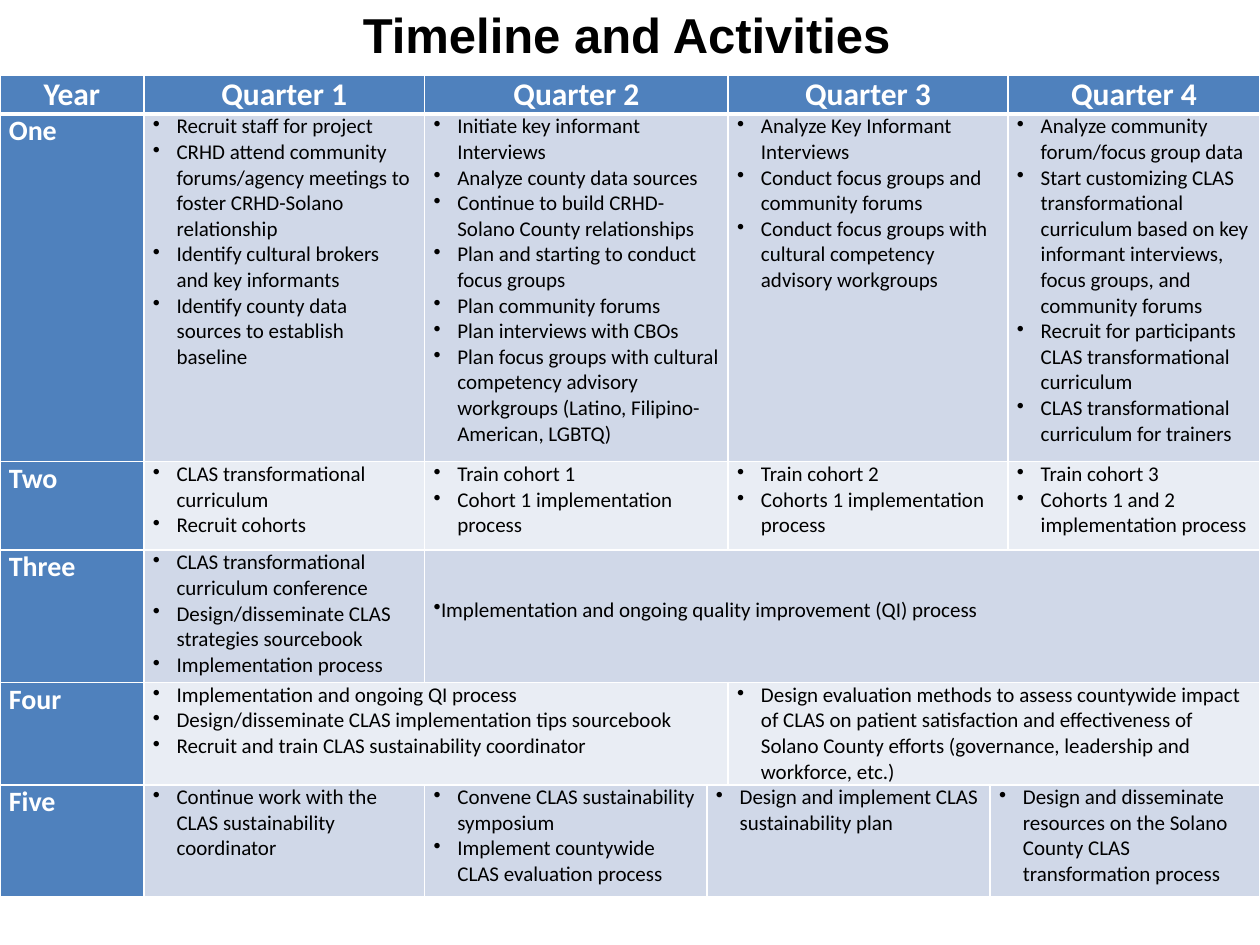
import pptx
import pptx.dml.color
import pptx.enum.text
import pptx.oxml
import pptx.oxml.ns
import pptx.util
from pptx.util import Cm

CENTER = pptx.enum.text.PP_ALIGN.CENTER
MIDDLE = pptx.enum.text.MSO_ANCHOR.MIDDLE
BLUE, BAND, PALE = "4F81BD", "D0D8E8", "E9EDF4"
WHITE, BLACK = "FFFFFF", "000000"
TITLE = {"name": "Arial", "size": 28, "bold": True, "color": BLACK}
HEADING = {"name": "Calibri", "size": 18, "bold": True, "color": WHITE}
YEAR = {**HEADING, "size": 16}
ACTIVITY = {"name": "Calibri", "size": 12, "bold": False, "color": BLACK}

COLUMN_WIDTHS = [2.9, 5.66, 5.69, 0.43, 5.28, 0.36, 5.08]
ROW_HEIGHTS = [0.77, 7.01, 1.78, 2.67, 2.03, 2.26]
QUARTERS = [1, 2, 4, 6]  # first column of each quarter

# Per year: name, first column of each block, activities of each block
YEARS = [
    ("One", QUARTERS, [
        ["Recruit staff for project",
         "CRHD attend community forums/agency meetings to foster CRHD-Solano relationship",
         "Identify cultural brokers and key informants",
         "Identify county data sources to establish baseline"],
        ["Initiate key informant Interviews",
         "Analyze county data sources",
         "Continue to build CRHD-Solano County relationships",
         "Plan and starting to conduct focus groups",
         "Plan community forums",
         "Plan interviews with CBOs",
         "Plan focus groups with cultural competency advisory workgroups "
         "(Latino, Filipino-American, LGBTQ)"],
        ["Analyze Key Informant Interviews",
         "Conduct focus groups and community forums",
         "Conduct focus groups with cultural competency advisory workgroups"],
        ["Analyze community forum/focus group data",
         "Start customizing CLAS transformational curriculum based on key "
         "informant interviews, focus groups, and community forums",
         "Recruit for participants CLAS transformational curriculum",
         "CLAS transformational curriculum for trainers"]]),
    ("Two", QUARTERS, [
        ["CLAS transformational curriculum", "Recruit cohorts"],
        ["Train cohort 1", "Cohort 1 implementation process"],
        ["Train cohort 2", "Cohorts 1 implementation process"],
        ["Train cohort 3", "Cohorts 1 and 2 implementation process"]]),
    ("Three", [1, 2], [
        ["CLAS transformational curriculum conference",
         "Design/disseminate CLAS strategies sourcebook",
         "Implementation process"],
        ["Implementation and ongoing quality improvement (QI) process"]]),
    ("Four", [1, 4], [
        ["Implementation and ongoing QI process",
         "Design/disseminate CLAS implementation tips sourcebook",
         "Recruit and train CLAS sustainability coordinator"],
        ["Design evaluation methods to assess countywide impact of CLAS on "
         "patient satisfaction and effectiveness of Solano County efforts "
         "(governance, leadership and workforce, etc.)"]]),
    ("Five", [1, 2, 3, 5], [
        ["Continue work with the CLAS sustainability coordinator"],
        ["Convene CLAS sustainability symposium",
         "Implement countywide CLAS evaluation process"],
        ["Design and implement CLAS sustainability plan"],
        ["Design and disseminate resources on the Solano County CLAS "
         "transformation process"]]),
]


def rgb(value):
    return pptx.dml.color.RGBColor.from_string(value)


class TimelineSlide:
    def __init__(self, presentation):
        self.slide = presentation.slides.add_slide(presentation.slide_layouts[6])

    def add_lines(self, frame, lines, style, align=None, indent=None):
        """Fill a text frame; an indent in cm makes the lines bulleted."""
        for number, line in enumerate(lines):
            paragraph = frame.add_paragraph() if number else frame.paragraphs[0]
            paragraph.alignment = align
            run = paragraph.add_run()
            run.text = line
            run.font.color.rgb = rgb(style["color"])
            run.font.size = pptx.util.Pt(style["size"])
            for key in ("name", "bold"):
                setattr(run.font, key, style[key])
            if indent is not None:
                properties = paragraph._p.get_or_add_pPr()
                properties.set("marL", str(Cm(indent)))
                properties.set("indent", str(-Cm(indent)))
                bullet = pptx.oxml.parse_xml(
                    f'<a:buChar {pptx.oxml.ns.nsdecls("a")} char="•"/>')
                properties.append(bullet)

    def title(self, text, left, top, width, height):
        box = self.slide.shapes.add_textbox(Cm(left), Cm(top), Cm(width), Cm(height))
        box.text_frame.word_wrap = True
        box.text_frame.vertical_anchor = MIDDLE
        self.add_lines(box.text_frame, [text], TITLE, CENTER)

    def table(self, top, widths, heights):
        table = self.slide.shapes.add_table(
            len(heights), len(widths), 0, Cm(top), Cm(sum(widths)), Cm(sum(heights))).table
        table.horz_banding = False
        for column, width in zip(table.columns, widths):
            column.width = Cm(width)
        for row, height in zip(table.rows, heights):
            row.height = Cm(height)
        return table

    def format_cell(self, cell, fill, above=1, below=1):
        margins = {"margin_left": 0.18, "margin_right": 0.18,
                   "margin_top": 0, "margin_bottom": 0}
        for key, value in margins.items():
            setattr(cell, key, Cm(value))
        properties = cell._tc.get_or_add_tcPr()
        for side, points in {"L": 1, "R": 1, "T": above, "B": below}.items():
            properties.append(pptx.oxml.parse_xml(
                f'<a:ln{side} {pptx.oxml.ns.nsdecls("a")} w="{pptx.util.Pt(points)}">'
                f'<a:solidFill><a:srgbClr val="{WHITE}"/></a:solidFill></a:ln{side}>'))
        cell.fill.solid()
        cell.fill.fore_color.rgb = rgb(fill)

    def blocks(self, table, row, starts):
        """Merge a row into blocks at the given columns and return their cells."""
        ends = [start - 1 for start in starts[1:]] + [len(table.columns) - 1]
        for start, end in zip(starts, ends):
            if end > start:
                table.cell(row, start).merge(table.cell(row, end))
        return [table.cell(row, start) for start in starts]


def main():
    presentation = pptx.Presentation()
    presentation.slide_width, presentation.slide_height = Cm(25.4), Cm(19.05)
    timeline = TimelineSlide(presentation)

    # Plan table: fills and borders
    plan = timeline.table(1.52, COLUMN_WIDTHS, ROW_HEIGHTS)
    for row in range(len(ROW_HEIGHTS)):
        for column in range(len(COLUMN_WIDTHS)):
            band = BAND if row % 2 else PALE
            timeline.format_cell(plan.cell(row, column),
                                 BLUE if row == 0 or column == 0 else band,
                                 above=3 if row == 1 else 1,
                                 below=3 if row == 0 else 1)

    # Header row
    headings = ["Year"] + [f"Quarter {number}" for number in range(1, 5)]
    for cell, heading in zip(timeline.blocks(plan, 0, [0] + QUARTERS), headings):
        timeline.add_lines(cell.text_frame, [heading], HEADING, CENTER)

    # One row per year
    for row, (year, starts, activities) in enumerate(YEARS, start=1):
        timeline.add_lines(plan.cell(row, 0).text_frame, [year], YEAR)
        for cell, lines in zip(timeline.blocks(plan, row, starts), activities):
            ongoing = year == "Three" and cell.is_merge_origin
            if ongoing:
                cell.margin_top = Cm(0.95)
            timeline.add_lines(cell.text_frame, lines, ACTIVITY, indent=0 if ongoing else 0.48)

    # Title
    timeline.title("Timeline and Activities ", 1.19, -0.05, 23.16, 1.45)
    presentation.save("out.pptx")


if __name__ == "__main__":
    main()
